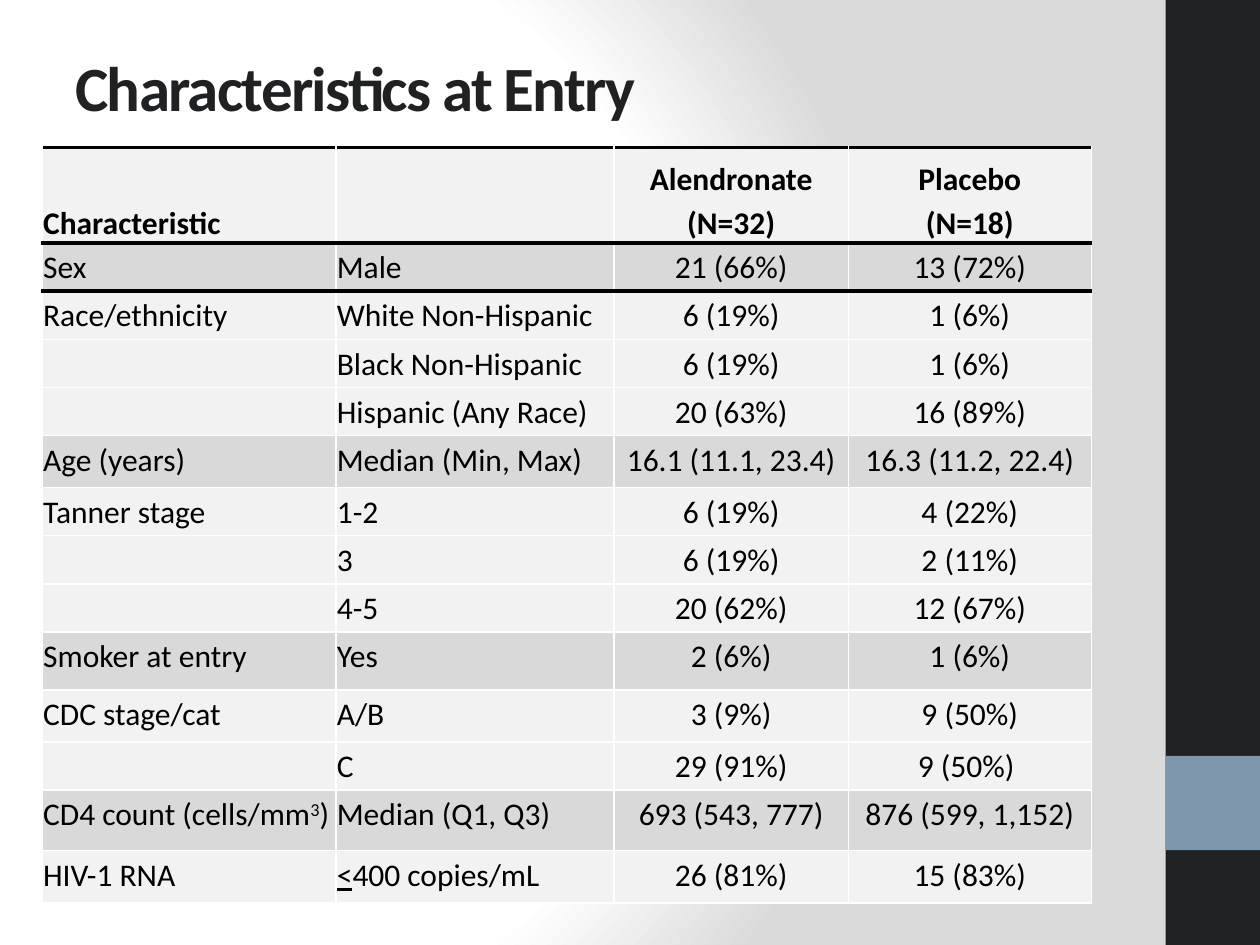
"""Build the Characteristics at Entry slide with its baseline table."""
from dataclasses import dataclass
from typing import NamedTuple

from lxml import etree
from pptx import Presentation
from pptx.dml.color import RGBColor
from pptx.enum.shapes import MSO_SHAPE
from pptx.enum.text import MSO_ANCHOR, PP_ALIGN
from pptx.oxml import parse_xml
from pptx.oxml.ns import qn
from pptx.util import Cm, Pt

RECT = MSO_SHAPE.RECTANGLE
TOP, MIDDLE, BOTTOM = MSO_ANCHOR.TOP, MSO_ANCHOR.MIDDLE, MSO_ANCHOR.BOTTOM
LEFT, CENTER = PP_ALIGN.LEFT, PP_ALIGN.CENTER
NS = "http://schemas.openxmlformats.org/drawingml/2006/main"
FONT = "Calibri"
COLORS = {
    "dark": "1F2123", "accent": "7E97AD", "black": "000000", "white": "FFFFFF",
    "light": "F2F2F2", "shade": "D9D9D9", "edge": "DADADA",
}


class Piece(NamedTuple):
    """A stretch of text with its own format."""
    text: str
    underline: bool = False
    baseline: int = 0


@dataclass(frozen=True)
class Bar:
    """A filled rectangle of the side band, in centimetres."""
    top: float
    height: float
    color: str


@dataclass(frozen=True)
class Row:
    """A table row: its texts, height in centimetres and shading."""
    cells: tuple
    height: float = 0.97
    shaded: bool = False


BARS = (Bar(0, 19.05, "dark"), Bar(15.24, 1.9, "accent"))
COL_WIDTHS = (5.92, 5.61, 4.72, 4.9)
ROWS = (
    Row(("Characteristic", "", "Alendronate\n(N=32)", "Placebo\n(N=18)"), 1.93),
    Row(("Sex", "Male", "21 (66%)", "13 (72%)"), shaded=True),
    Row(("Race/ethnicity", "White Non-Hispanic", "6 (19%)", "1 (6%)")),
    Row(("", "Black Non-Hispanic", "6 (19%)", "1 (6%)")),
    Row(("", "Hispanic (Any Race)", "20 (63%)", "16 (89%)")),
    Row(("Age (years)", "Median (Min, Max)", "16.1 (11.1, 23.4)", "16.3 (11.2, 22.4)"),
        1.05, True),
    Row(("Tanner stage", "1-2", "6 (19%)", "4 (22%)")),
    Row(("", "3", "6 (19%)", "2 (11%)")),
    Row(("", "4-5", "20 (62%)", "12 (67%)")),
    Row(("Smoker at entry", "Yes", "2 (6%)", "1 (6%)"), 1.17, True),
    Row(("CDC stage/cat", "A/B", "3 (9%)", "9 (50%)"), 1.05),
    Row(("", "C", "29 (91%)", "9 (50%) ")),
    Row(((Piece("CD4 count (cells/mm"), Piece("3", baseline=30000), Piece(")")),
         "Median (Q1, Q3)", "693 (543, 777)", "876 (599, 1,152)"), 1.21, True),
    Row(("HIV-1 RNA", (Piece("<", underline=True), Piece("400 copies/mL")),
         "26 (81%)", "15 (83%)"), 1.06),
)
HEAVY_RULES = {0, 1, 2}


def rgb(name: str) -> RGBColor:
    """Return the named colour."""
    return RGBColor.from_string(COLORS[name])


def write(p, text, *, size: float, color: str, bold: bool = False,
          align=LEFT, tracking: int = 0) -> None:
    """Fill a paragraph with a string or a sequence of pieces."""
    p.alignment = align
    for piece in (Piece(text),) if isinstance(text, str) else text:
        for i, line in enumerate(piece.text.split("\n")):
            if i:
                p.add_line_break()
            r = p.add_run()
            r.text = line
            r.font.name, r.font.size, r.font.bold = FONT, Pt(size), bold
            r.font.color.rgb = rgb(color)
            r.font.underline = piece.underline
            rpr = r._r.get_or_add_rPr()
            if piece.baseline:
                rpr.set("baseline", str(piece.baseline))
            if tracking:
                rpr.set("spc", str(tracking))


def set_background(s) -> None:
    """Give the slide its circular gradient."""
    s.background.fill.solid()
    solid = s.element.find(".//" + qn("p:bgPr")).find(qn("a:solidFill"))
    stops = "".join(
        f'<a:gs pos="{pos}"><a:srgbClr val="{COLORS[name]}"/></a:gs>'
        for pos, name in ((0, "white"), (75000, "white"), (100000, "edge")))
    solid.getparent().replace(solid, parse_xml(
        f'<a:gradFill xmlns:a="{NS}" rotWithShape="1"><a:gsLst>{stops}</a:gsLst>'
        '<a:path path="circle"><a:fillToRect l="20000" t="50000" r="100000" b="50000"/>'
        '</a:path></a:gradFill>'))


def add_bar(s, bar: Bar) -> None:
    """Draw one rectangle of the side band."""
    sp = s.shapes.add_shape(RECT, Cm(23.5), Cm(bar.top), Cm(1.9), Cm(bar.height))
    sp.shadow.inherit = False
    sp.fill.solid()
    sp.fill.fore_color.rgb = rgb(bar.color)
    sp.line.fill.background()


def set_borders(cell, row: int) -> None:
    """Rule a cell in white, with heavy black rules around the first rows."""
    rules = {"lnL": False, "lnR": False,
             "lnT": row in HEAVY_RULES, "lnB": row + 1 in HEAVY_RULES}
    tcpr = cell._tc.get_or_add_tcPr()
    for i, (tag, heavy) in enumerate(rules.items()):
        ln = etree.Element(qn(f"a:{tag}"), w=str(Pt(2.25 if heavy else 1)))
        fill = etree.SubElement(ln, qn("a:solidFill"))
        etree.SubElement(fill, qn("a:srgbClr"), val=COLORS["black" if heavy else "white"])
        tcpr.insert(i, ln)


def fill_cell(cell, text, row: int, col: int) -> None:
    """Format one table cell and write its text."""
    header = row == 0
    cell.margin_left = cell.margin_right = Cm(0.02)
    cell.margin_top = cell.margin_bottom = 0
    cell.vertical_anchor = BOTTOM if header else TOP
    cell.fill.solid()
    cell.fill.fore_color.rgb = rgb("shade" if ROWS[row].shaded else "light")
    set_borders(cell, row)
    if text:
        p = cell.text_frame.paragraphs[0]
        p.line_spacing = 1.15
        p.space_before = p.space_after = Pt(1)
        write(p, text, size=18, color="black", bold=header,
              align=CENTER if col > 1 else LEFT)


def add_characteristics(s) -> None:
    """Add the table of characteristics."""
    table = s.shapes.add_table(
        len(ROWS), len(COL_WIDTHS), Cm(0.85), Cm(2.97), Cm(sum(COL_WIDTHS)),
        Cm(sum(row.height for row in ROWS))).table
    table.first_row = table.horz_banding = False
    for column, width in zip(table.columns, COL_WIDTHS):
        column.width = Cm(width)
    for i, row in enumerate(ROWS):
        table.rows[i].height = Cm(row.height)
        for j, text in enumerate(row.cells):
            fill_cell(table.cell(i, j), text, i, j)


def add_title(s) -> None:
    """Add the slide title."""
    tf = s.shapes.add_textbox(Cm(1.27), Cm(0.76), Cm(20.96), Cm(1.98)).text_frame
    tf.word_wrap = True
    tf.vertical_anchor = MIDDLE
    write(tf.paragraphs[0], "Characteristics at Entry", size=36, color="dark",
          bold=True, tracking=-100)


def main() -> None:
    """Build and save the slide."""
    prs = Presentation()
    prs.slide_width, prs.slide_height = Cm(25.4), Cm(19.05)
    s = prs.slides.add_slide(prs.slide_layouts[6])
    set_background(s)
    for bar in BARS:
        add_bar(s, bar)
    add_characteristics(s)
    add_title(s)
    prs.save("out.pptx")


if __name__ == "__main__":
    main()
